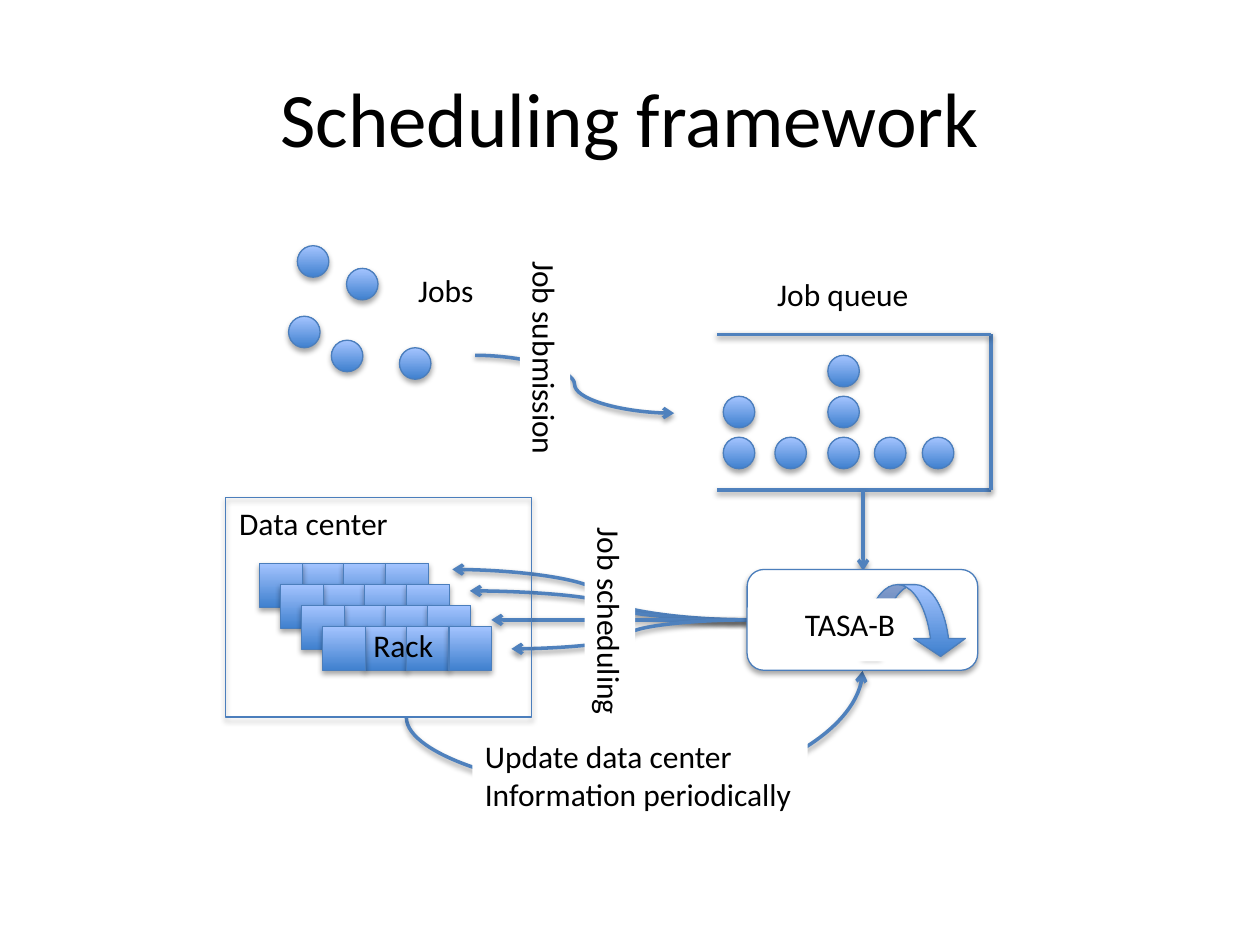
from lxml import etree
from pptx import Presentation
from pptx import util as u
from pptx.dml.color import RGBColor
from pptx.enum import shapes as s, text as t
from pptx.oxml.ns import qn

COLORS = {
    "ink": "000000",
    "paper": "FFFFFF",
    "arrow": "4F81BD",
    "outline": "4B7EBC",
    "deep": "3F80CE",
    "light": "A4C4FF",
}
COLUMNS, ROWS = 100, 75  # square cells over a 10 x 7.5 inch slide
CELL = u.Inches(0.1)
JOB = 2.5                # diameter of a job
UNIT_W, UNIT_H = 3.4, 3.5  # one unit of a rack


def cells(*lengths):
    return [round(length * CELL) for length in lengths]


def rgb(name):
    return RGBColor.from_string(COLORS[name])


def add_shadow(effects, opacity, distance):
    shadow = etree.SubElement(effects, qn("a:outerShdw"), blurRad="40000", dist=str(distance),
                              dir="5400000", rotWithShape="0")
    color = etree.SubElement(shadow, qn("a:srgbClr"), val=COLORS["ink"])
    etree.SubElement(color, qn("a:alpha"), val=str(opacity * 1000))


def add_block(slide, preset, left, top, width, height, fill="gradient", adjust=()):
    block = slide.shapes.add_shape(preset, *cells(left, top, width, height))
    for index, value in enumerate(adjust):
        block.adjustments[index] = value
    if fill == "gradient":
        block.fill.gradient()
        block.fill.gradient_angle = 90
        for stop, name, position in zip(block.fill.gradient_stops, ("deep", "light"), (0, 1)):
            stop.color.rgb = rgb(name)
            stop.position = position
    elif fill:
        block.fill.solid()
        block.fill.fore_color.rgb = rgb(fill)
    else:
        block.fill.background()
    block.line.color.rgb = rgb("outline")
    block.line.width = u.Pt(0.75)
    block.shadow.inherit = False
    add_shadow(block._element.spPr.find(qn("a:effectLst")), 35, 23000)


def add_job(slide, left, top):
    add_block(slide, s.MSO_SHAPE.OVAL, left, top, JOB, JOB)


def add_link(slide, start, end, curved=False, arrow=True, turn=0, bend=None):
    kind = s.MSO_CONNECTOR.CURVE if curved else s.MSO_CONNECTOR.STRAIGHT
    link = slide.shapes.add_connector(kind, *cells(*start, *end))
    link.line.color.rgb = rgb("arrow")
    link.line.width = u.Pt(2)
    properties = link._element.spPr
    if arrow:
        etree.SubElement(properties.find(qn("a:ln")), qn("a:tailEnd"), type="arrow")
    if turn:
        properties.find(qn("a:xfrm")).set("rot", str(turn * 60000))
    if bend is not None:
        guides = properties.find(qn("a:prstGeom")).find(qn("a:avLst"))
        etree.SubElement(guides, qn("a:gd"), name="adj1", fmla=f"val {round(bend * 100000)}")
    add_shadow(etree.SubElement(properties, qn("a:effectLst")), 38, 20000)


def add_text(slide, words, left, top, width, height, size=18, fill=None, turn=0, wrap=False,
             align=t.PP_ALIGN.LEFT, anchor=t.MSO_ANCHOR.TOP, indent=1):
    label = slide.shapes.add_textbox(*cells(left, top, width, height))
    label.rotation = turn
    if fill:
        label.fill.solid()
        label.fill.fore_color.rgb = rgb(fill)
    frame = label.text_frame
    frame.word_wrap = wrap
    frame.vertical_anchor = anchor
    frame.margin_left = cells(indent)[0]
    frame.text = words
    for paragraph in frame.paragraphs:
        paragraph.alignment = align
        paragraph.font.size = u.Pt(size)
        paragraph.font.name = "Calibri"
        paragraph.font.color.rgb = rgb("ink")


def add_submission(slide):
    for left, top in ((27.5, 21.3), (22.9, 25.1), (26.3, 27), (31.7, 27.6), (23.6, 19.5)):
        add_job(slide, left, top)
    add_link(slide, (37.7, 28.2), (53.5, 32.8), curved=True)
    add_text(slide, "Job submission", 34.5, 26.5, 17.5, 4, fill="paper", turn=90)
    add_text(slide, "Jobs", 32.2, 21, 6.5, 4)


def add_queue(slide):
    # Each column of waiting jobs: left edge and number of jobs
    for left, count in ((57.4, 2), (61.5, 1), (65.7, 3), (69.4, 1), (73.2, 1)):
        for level in range(count):
            add_job(slide, left, 34.7 - 3.25 * level)
    # Queue outline, open to the left
    corners = ((56.9, 38.9), (78.65, 38.9), (78.65, 26.55), (56.9, 26.55))
    for start, end in zip(corners, corners[1:]):
        add_link(slide, start, end, arrow=False)
    add_text(slide, "Job queue", 60.7, 21.3, 12.5, 4)


def add_data_center(slide):
    for rack in range(4):
        for unit in (1, 0, 2, 3):
            add_block(slide, s.MSO_SHAPE.RECTANGLE, 20.6 + 1.67 * rack + 3.34 * unit,
                      44.7 + 1.67 * rack, UNIT_W, UNIT_H)
    add_text(slide, "Rack", 27.5, 49.2, 9.8, 4, wrap=True, indent=2.13)
    add_block(slide, s.MSO_SHAPE.RECTANGLE, 17.9, 39.5, 24.3, 17.4, fill=None)
    add_text(slide, "Data center", 18, 39.5, 16.6, 4, wrap=True)


def add_scheduler(slide):
    add_block(slide, s.MSO_SHAPE.ROUNDED_RECTANGLE, 59.3, 45.2, 18.3, 8, fill="paper")
    add_block(slide, s.MSO_SHAPE.CURVED_DOWN_ARROW, 68.5, 46.4, 8.2, 5.7,
              adjust=(0.25, 0.935, 0.25))
    add_text(slide, "TASA-B", 62.9, 47.5, 9.3, 5, fill="paper", wrap=True)


def main():
    deck = Presentation()
    deck.slide_width, deck.slide_height = cells(COLUMNS, ROWS)
    slide = deck.slides.add_slide(deck.slide_layouts[6])

    add_text(slide, "Scheduling framework", 5, 3, 90, 12.5, size=44, wrap=True,
             align=t.PP_ALIGN.CENTER, anchor=t.MSO_ANCHOR.MIDDLE)

    # Scheduler to the racks
    scheduler = (59.3, 49.2)
    for rack in ((35.9, 45.2), (37.3, 46.9), (39, 49.2)):
        add_link(slide, scheduler, rack, curved=True)

    add_submission(slide)
    add_queue(slide)

    # Feedback from the data center, a curve turned a quarter
    add_link(slide, (52.2, 73.2), (48.5, 37), curved=True, turn=90, bend=-1.6)
    add_text(slide, "Update data center\nInformation periodically", 37.5, 58, 26.6, 7.1,
             fill="paper")

    # Scheduler to the front rack, queue to scheduler
    add_link(slide, scheduler, (40.6, 51.5), curved=True)
    add_link(slide, (68.5, 38.9), (68.5, 45.3))
    add_text(slide, "Job scheduling", 39.9, 47.4, 17, 4, fill="paper", turn=90)

    add_data_center(slide)
    add_scheduler(slide)
    deck.save("out.pptx")


if __name__ == "__main__":
    main()
